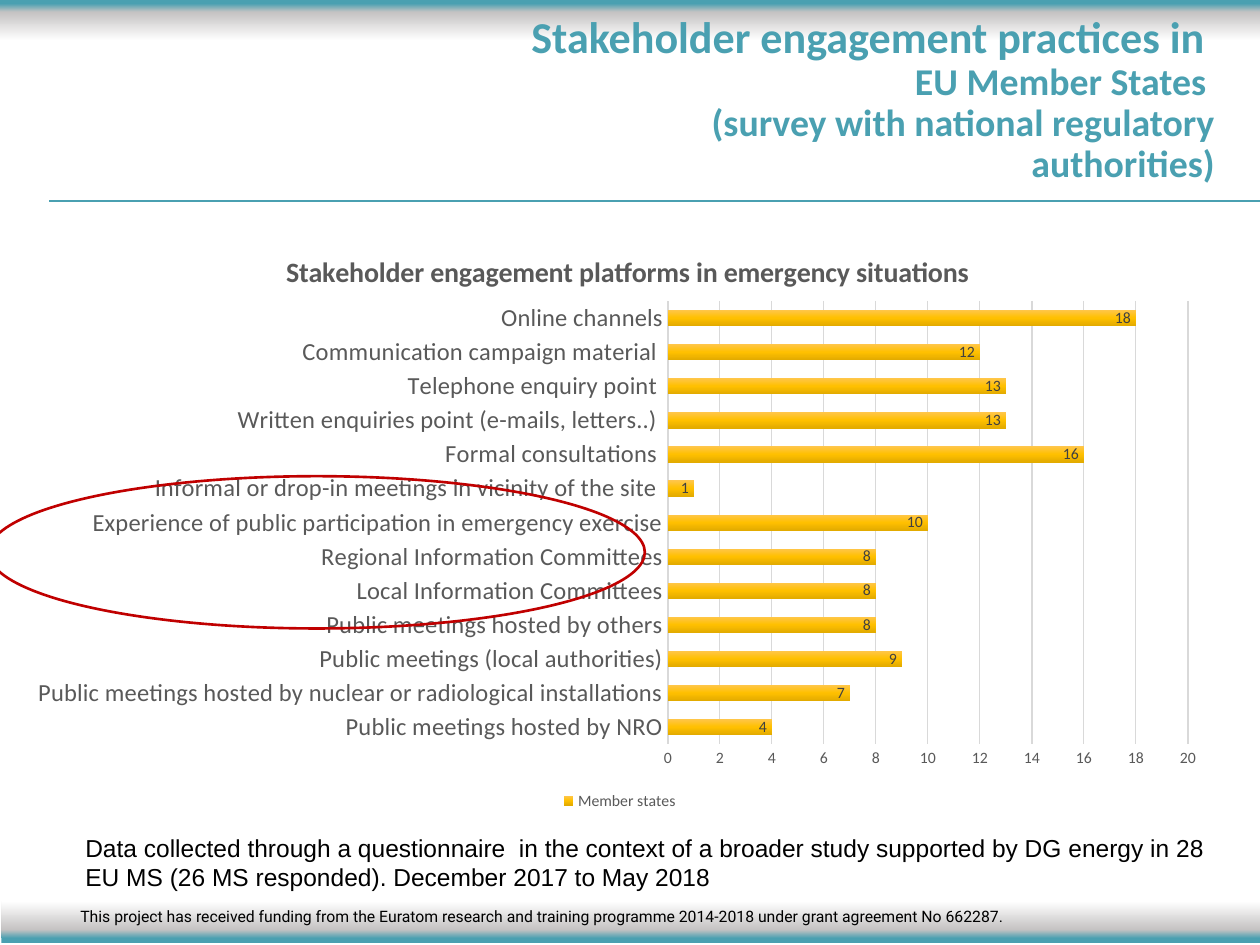
from pptx import Presentation
from pptx.chart.data import CategoryChartData
from pptx.dml.color import RGBColor
from pptx.enum.chart import (XL_CHART_TYPE, XL_LABEL_POSITION,
                             XL_LEGEND_POSITION, XL_TICK_MARK)
from pptx.enum.shapes import MSO_CONNECTOR, MSO_SHAPE
from pptx.enum.text import MSO_ANCHOR, PP_ALIGN
from pptx.oxml import parse_xml
from pptx.oxml.ns import nsdecls, qn
from pptx.util import Cm, Pt

TEAL = RGBColor(0x4A, 0xA0, 0xB1)
SILVER = RGBColor(0xC5, 0xC3, 0xC3)
WHITE = RGBColor(0xFF, 0xFF, 0xFF)
BLACK = RGBColor(0, 0, 0)
RED = RGBColor(0xC0, 0, 0)
GREY = RGBColor(0x59, 0x59, 0x59)
DARK = RGBColor(0x40, 0x40, 0x40)
PALE = RGBColor(0xD9, 0xD9, 0xD9)
BAND = [(12, TEAL), (32, SILVER), (99, WHITE)]
GOLD = [(0, RGBColor(0xFF, 0xC6, 0x4B)), (50, RGBColor(0xFF, 0xC0, 0)),
        (100, RGBColor(0xE3, 0xAB, 0))]
DOWN, UP = 270, 90

TITLE = [
    ("Stakeholder engagement practices in ", 25.2),
    ("EU Member States ", 21.6),
    ("(survey with national regulatory authorities)", 21.6),
]
HEAD = "Stakeholder engagement platforms in emergency situations"
DATA = [
    ("Public meetings hosted by NRO", 4),
    ("Public meetings hosted by nuclear or radiological installations", 7),
    ("Public meetings (local authorities)", 9),
    ("Public meetings hosted by others", 8),
    ("Local Information Committees", 8),
    ("Regional Information Committees", 8),
    ("Experience of public participation in emergency exercise", 10),
    ("Informal or drop-in meetings in vicinity of the site ", 1),
    ("Formal consultations ", 16),
    ("Written enquiries point (e-mails, letters..) ", 13),
    ("Telephone enquiry point ", 13),
    ("Communication campaign material ", 12),
    ("Online channels", 18),
]
NOTE = ("Data collected through a questionnaire  in the context of a broader "
        "study supported by DG energy in 28 EU MS (26 MS responded). "
        "December 2017 to May 2018")
FUND = ("This project has received funding from the Euratom research and "
        "training programme 2014-2018 under grant agreement No 662287.")


def style(font, size, color, name="Calibri", bold=False):
    font.size, font.name, font.bold = Pt(size), name, bold
    font.color.rgb = color


def text(box, lines, color=BLACK, name="Arial", bold=False,
         align=PP_ALIGN.LEFT, anchor=MSO_ANCHOR.TOP, space=1.0):
    """Add a text box; lines are (wording, size) pairs."""
    frame = slide.shapes.add_textbox(*map(Cm, box)).text_frame
    frame.word_wrap, frame.vertical_anchor = True, anchor
    for i, (words, size) in enumerate(lines):
        para = frame.add_paragraph() if i else frame.paragraphs[0]
        para.alignment, para.line_spacing = align, space
        run = para.add_run()
        run.text = words
        style(run.font, size, color, name, bold)


def shade(fill, root, stops, angle):
    """Give the fill, held inside root, a gradient of any number of stops."""
    fill.gradient()
    fill.gradient_angle = angle
    marks = "".join(f'<a:gs pos="{at * 1000}"><a:srgbClr val="{color}"/></a:gs>'
                    for at, color in stops)
    old = root.xpath(".//a:gsLst")[0]
    old.getparent().replace(
        old, parse_xml(f'<a:gsLst {nsdecls("a")}>{marks}</a:gsLst>'))


def shape(kind, box):
    item = slide.shapes.add_shape(kind, *map(Cm, box))
    item.shadow.inherit = False
    return item


def band(box, angle):
    item = shape(MSO_SHAPE.RECTANGLE, box)
    item.line.fill.background()
    shade(item.fill, item.element, BAND, angle)


def place(root, index, **spots):
    """Set a manual chart layout, in fractions of the chart."""
    for old in root.findall(qn("c:layout")):
        root.remove(old)
    inner = '<c:layoutTarget val="inner"/>' if "w" in spots else ""
    modes = "".join(f'<c:{k}Mode val="edge"/>' for k in "xy")
    sizes = "".join(f'<c:{k} val="{v}"/>' for k, v in spots.items())
    root.insert(index, parse_xml(
        f'<c:layout {nsdecls("c")}><c:manualLayout>{inner}{modes}{sizes}'
        '</c:manualLayout></c:layout>'))


def graph(box):
    data = CategoryChartData()
    data.categories = [name for name, _ in DATA]
    data.add_series("Member states", [count for _, count in DATA])
    chart = slide.shapes.add_chart(
        XL_CHART_TYPE.BAR_CLUSTERED, *map(Cm, box), data).chart
    style(chart.font, 10, BLACK)

    chart.has_title = True
    title = chart.chart_title
    title.text_frame.text = HEAD
    style(title.text_frame.paragraphs[0].runs[0].font, 16, GREY, bold=True)
    title.include_in_layout = False
    place(title.element, 1, x=0.22, y=0.04)
    place(chart.element.xpath(".//c:plotArea")[0], 0,
          x=0.54, y=0.13, w=0.43, h=0.75)

    chart.has_legend = True
    chart.legend.position = XL_LEGEND_POSITION.BOTTOM
    chart.legend.include_in_layout = False
    style(chart.legend.font, 9, GREY)

    cats, vals = chart.category_axis, chart.value_axis
    for axis, size in ((cats, 14), (vals, 9)):
        axis.major_tick_mark = axis.minor_tick_mark = XL_TICK_MARK.NONE
        style(axis.tick_labels.font, size, GREY)
    cats.format.line.color.rgb = PALE
    cats.format.line.width = Pt(1)
    vals.format.line.fill.background()
    vals.minimum_scale, vals.maximum_scale, vals.major_unit = 0, 20, 2
    grid = vals.major_gridlines.format.line
    grid.color.rgb, grid.width = PALE, Pt(0.75)

    plot = chart.plots[0]
    plot.gap_width, plot.overlap = 115, -20
    plot.vary_by_categories = False
    bars = plot.series[0]
    shade(bars.format.fill, chart.element, GOLD, DOWN)
    labels = bars.data_labels
    labels.show_value = True
    labels.position = XL_LABEL_POSITION.INSIDE_END
    style(labels.font, 9, DARK)


deck = Presentation()
deck.slide_width, deck.slide_height = Cm(25.4), Cm(19.05)
slide = deck.slides.add_slide(deck.slide_layouts[6])

band((0.03, 18.16, 25.43, 0.86), UP)
text((1.37, 18.16, 22.28, 0.8), [(FUND, 9)], name="Roboto")
band((-0.03, -0.03, 25.43, 0.86), DOWN)

rule = slide.shapes.add_connector(
    MSO_CONNECTOR.STRAIGHT, Cm(25.4), Cm(4.06), Cm(0.99), Cm(4.06))
rule.line.color.rgb, rule.line.width = TEAL, Pt(1)
rule.element.spPr.append(parse_xml(f'<a:effectLst {nsdecls("a")}/>'))

text((10.29, 0.51, 14.45, 3.02), TITLE, color=TEAL, name="Calibri", bold=True,
     align=PP_ALIGN.RIGHT, anchor=MSO_ANCHOR.MIDDLE, space=0.9)
graph((0.3, 4.52, 24.38, 11.91))

ring = shape(MSO_SHAPE.OVAL, (-0.23, 9.6, 13.23, 3.07))
ring.fill.background()
ring.line.color.rgb, ring.line.width = RED, Pt(1.5)

text((1.47, 16.66, 23.16, 1.45), [(NOTE, 14)])

deck.save("out.pptx")
